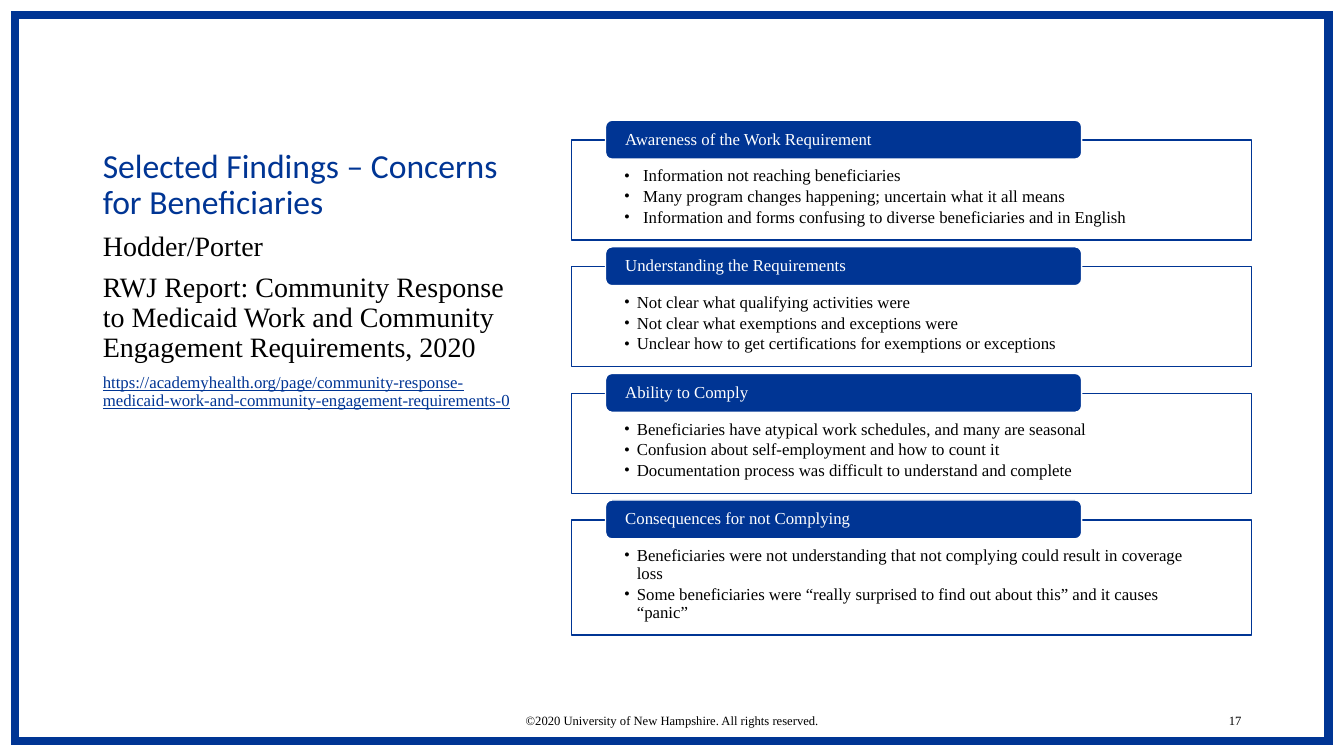
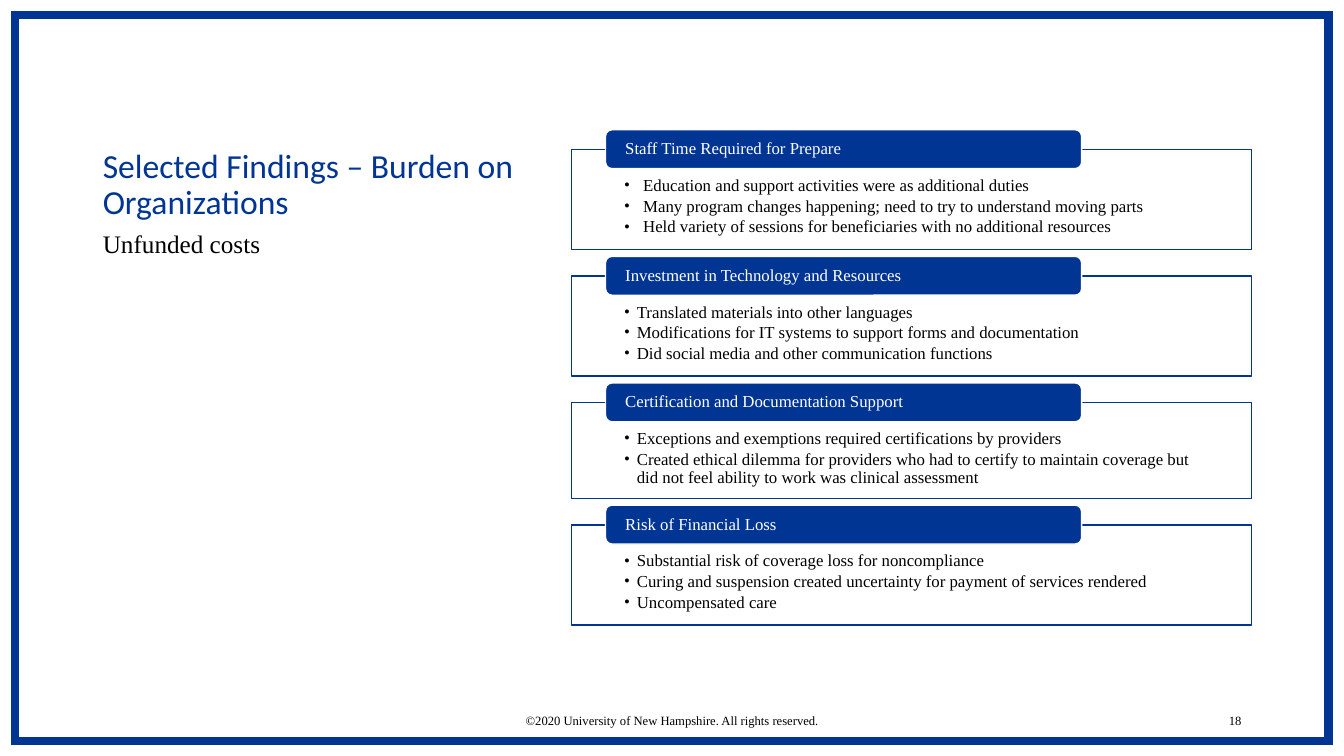
import pptx
import pptx.dml.color
import pptx.enum.shapes
import pptx.enum.text
import pptx.oxml.ns
import pptx.util
import lxml.etree

Cm = pptx.util.Cm
Pt = pptx.util.Pt
qn = pptx.oxml.ns.qn
ANCHOR = pptx.enum.text.MSO_ANCHOR
ALIGN = pptx.enum.text.PP_ALIGN
SHAPE = pptx.enum.shapes.MSO_SHAPE

BLUE, WHITE, BLACK = "003594", "FFFFFF", "000000"
SERIF, SANS = "Times New Roman", "Calibri"
FOOTER = "©2020 University of New Hampshire. All rights reserved."
FIRST_NUMBER = 17

TEXT_LEFT, TEXT_WIDTH = 2.34, 10.92
CARD_LEFT, CARD_WIDTH, CARD_GAP = 14.4, 17.14, 0.67
TAB_LEFT, TAB_WIDTH, TAB_HEIGHT, TAB_RISE = 15.26, 12, 0.98, 0.5
WIDE_INDENT, INDENT = 0.48, 0.32

SLIDES = [
    {
        "title": "Selected Findings – Concerns for Beneficiaries",
        "body": [
            ("Hodder/Porter", 20, False),
            ("RWJ Report: Community Response to Medicaid Work and Community "
             "Engagement Requirements, 2020", 20, False),
            ("https://academyhealth.org/page/community-response-medicaid-work-"
             "and-community-engagement-requirements-0", 12, True),
        ],
        "top": 3.53,
        "cards": [
            ("Awareness of the Work Requirement", 2.52, [
                "Information not reaching beneficiaries",
                "Many program changes happening; uncertain what it all means",
                "Information and forms confusing to diverse beneficiaries and in English",
            ]),
            ("Understanding the Requirements", 2.52, [
                "Not clear what qualifying activities were",
                "Not clear what exemptions and exceptions were",
                "Unclear how to get certifications for exemptions or exceptions",
            ]),
            ("Ability to Comply", 2.52, [
                "Beneficiaries have atypical work schedules, and many are seasonal",
                "Confusion about self-employment and how to count it",
                "Documentation process was difficult to understand and complete",
            ]),
            ("Consequences for not Complying", 2.9, [
                "Beneficiaries were not understanding that not complying could "
                "result in coverage loss",
                "Some beneficiaries were “really surprised to find out about this” "
                "and it causes “panic”",
            ]),
        ],
    },
    {
        "title": "Selected Findings – Burden on Organizations",
        "body": [("Unfunded costs", 18, False)],
        "top": 3.77,
        "cards": [
            ("Staff Time Required for Prepare", 2.52, [
                "Education and support activities were as additional duties",
                "Many program changes happening; need to try to understand moving parts",
                "Held variety of sessions for beneficiaries with no additional resources",
            ]),
            ("Investment in Technology and Resources", 2.52, [
                "Translated materials into other languages",
                "Modifications for IT systems to support forms and documentation",
                "Did social media and other communication functions",
            ]),
            ("Certification and Documentation Support", 2.41, [
                "Exceptions and exemptions required certifications by providers",
                "Created ethical dilemma for providers who had to certify to maintain "
                "coverage but did not feel ability to work was clinical assessment",
            ]),
            ("Risk of Financial Loss", 2.52, [
                "Substantial risk of coverage loss for noncompliance",
                "Curing and suspension created uncertainty for payment of services rendered",
                "Uncompensated care",
            ]),
        ],
    },
]


def rgb(value):
    return pptx.dml.color.RGBColor.from_string(value)


def place(sp, left, top, width, height):
    sp.left, sp.top, sp.width, sp.height = Cm(left), Cm(top), Cm(width), Cm(height)


def set_frame(tf, anchor, insets=(0.25, 0.13, 0.25, 0.13)):
    tf.word_wrap = True
    tf.auto_size = pptx.enum.text.MSO_AUTO_SIZE.NONE
    tf.vertical_anchor = anchor
    tf.margin_left, tf.margin_top, tf.margin_right, tf.margin_bottom = map(Cm, insets)


def set_bullet(p, indent):
    pPr = p._p.get_or_add_pPr()
    pPr.set("marL", str(Cm(indent)))
    pPr.set("indent", str(-Cm(indent)))
    if indent:
        lxml.etree.SubElement(pPr, qn("a:buFont")).set("typeface", SERIF)
        lxml.etree.SubElement(pPr, qn("a:buChar")).set("char", "•")
    else:
        lxml.etree.SubElement(pPr, qn("a:buNone"))


def style(p, size, color, font=SERIF, align=ALIGN.LEFT, spacing=0.9, before=0, after=0):
    p.alignment = align
    p.line_spacing = spacing
    p.space_before, p.space_after = Pt(before), Pt(after)
    for r in p.runs:
        r.font.size, r.font.name = Pt(size), font
        r.font.color.rgb = rgb(color)


def add_paragraphs(tf, texts):
    tf.text = texts[0]
    for text in texts[1:]:
        tf.add_paragraph().text = text
    return tf.paragraphs


def add_box(slide, kind, box, fill, line, weight=1):
    sp = slide.shapes.add_shape(kind, *map(Cm, box))
    sp.shadow.inherit = False
    if fill:
        sp.fill.solid()
        sp.fill.fore_color.rgb = rgb(fill)
    else:
        sp.fill.background()
    sp.line.color.rgb = rgb(line)
    sp.line.width = Pt(weight)
    return sp


def add_title(slide, text):
    sp = slide.shapes.title
    place(sp, TEXT_LEFT, 1.27, TEXT_WIDTH, 4.45)
    tf = sp.text_frame
    set_frame(tf, ANCHOR.BOTTOM)
    tf.text = text
    style(tf.paragraphs[0], 24, BLUE, SANS)


def add_body(slide, items):
    sp = slide.placeholders[1]
    place(sp, TEXT_LEFT, 5.72, TEXT_WIDTH, 10.59)
    tf = sp.text_frame
    set_frame(tf, ANCHOR.TOP)
    paragraphs = add_paragraphs(tf, [text for text, size, is_link in items])
    for i, (p, (text, size, is_link)) in enumerate(zip(paragraphs, items)):
        set_bullet(p, 0)
        style(p, size, BLUE if is_link else BLACK, before=7.5 if i else 0)
        if is_link:
            p.runs[0].font.underline = True


def add_footer_text(slide, text, left, width, align):
    sp = slide.shapes.add_textbox(Cm(left), Cm(17.65), Cm(width), Cm(1.02))
    tf = sp.text_frame
    set_frame(tf, ANCHOR.MIDDLE)
    tf.text = text
    style(tf.paragraphs[0], 9, BLACK, align=align, spacing=1.0)


def add_card(slide, top, height, heading, bullets, indent):
    sp = add_box(slide, SHAPE.RECTANGLE, (CARD_LEFT, top, CARD_WIDTH, height), WHITE, BLUE)
    set_frame(sp.text_frame, ANCHOR.TOP, (1.33, 0.69, 1.33, 0.22))
    for p in add_paragraphs(sp.text_frame, bullets):
        set_bullet(p, indent)
        style(p, 12, BLACK, after=1.8)

    tab = (TAB_LEFT, top - TAB_RISE, TAB_WIDTH, TAB_HEIGHT)
    sp = add_box(slide, SHAPE.ROUNDED_RECTANGLE, tab, BLUE, WHITE)
    set_frame(sp.text_frame, ANCHOR.MIDDLE, (0.45, 0, 0.45, 0))
    sp.text_frame.text = heading
    style(sp.text_frame.paragraphs[0], 12, WHITE)


def add_cards(slide, top, cards):
    for i, (heading, height, bullets) in enumerate(cards):
        add_card(slide, top, height, heading, bullets, INDENT if i else WIDE_INDENT)
        top += height + CARD_GAP


def add_master_frame(prs, slide):
    sp = add_box(slide, SHAPE.RECTANGLE, (0.38, 0.38, 33.1, 18.29), None, BLUE, 6)
    ln = sp.element.spPr.find(qn("a:ln"))
    lxml.etree.SubElement(ln, qn("a:miter")).set("lim", "800000")
    prs.slide_master.shapes.element.insert(2, sp.element)


def main():
    prs = pptx.Presentation()
    prs.slide_width, prs.slide_height = Cm(33.87), Cm(19.05)
    for number, content in enumerate(SLIDES, FIRST_NUMBER):
        slide = prs.slides.add_slide(prs.slide_layouts[1])
        add_title(slide, content["title"])
        add_body(slide, content["body"])
        add_footer_text(slide, FOOTER, 11.22, 11.43, ALIGN.CENTER)
        add_footer_text(slide, str(number), 23.92, 7.62, ALIGN.RIGHT)
        add_cards(slide, content["top"], content["cards"])
    add_master_frame(prs, slide)
    prs.save("out.pptx")


if __name__ == "__main__":
    main()
